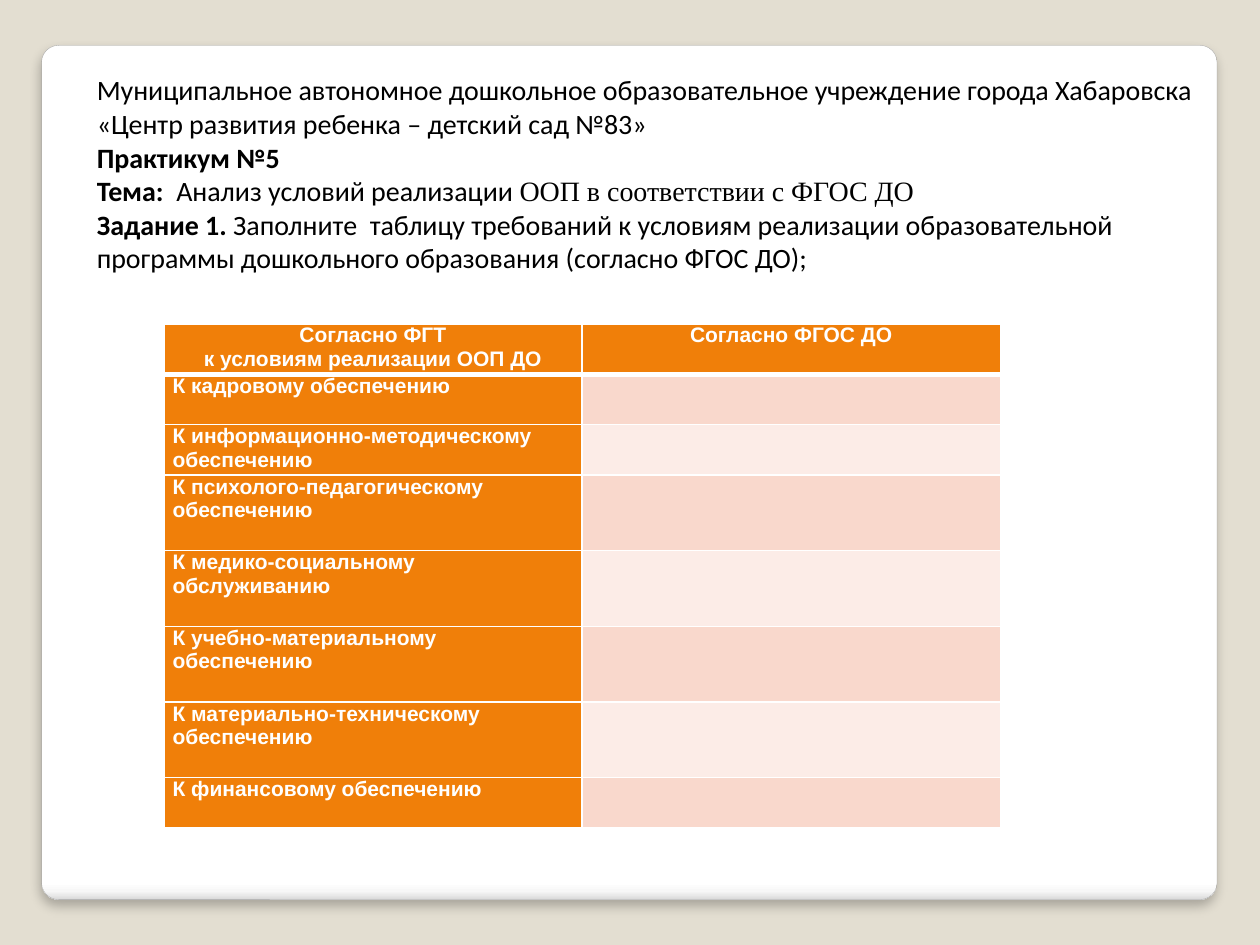
from dataclasses import dataclass

import lxml.etree
import pptx
import pptx.dml.color
import pptx.enum.shapes
import pptx.enum.text
import pptx.oxml
import pptx.oxml.ns
import pptx.util

Inches = pptx.util.Inches
Pt = pptx.util.Pt
qn = pptx.oxml.ns.qn
CENTER = pptx.enum.text.PP_ALIGN.CENTER
LEFT = pptx.enum.text.PP_ALIGN.LEFT


@dataclass(frozen=True)
class Theme:
    background: str = "E3DED1"
    white: str = "FFFFFF"
    black: str = "000000"
    panel_line: str = "A4A4A4"
    orange: str = "F07F09"
    bands: tuple = ("F9D8CC", "FCECE7")
    panel_stops: tuple = ((0, "FFFFFF"), (98, "FFFFFF"), (99, "F7F7F7"), (100, "DADADA"))
    intro_font: str = "Calibri"
    accent_font: str = "Times New Roman"
    table_font: str = "Arial"
    intro_size: int = 16
    table_size: int = 12


@dataclass(frozen=True)
class Span:
    text: str
    bold: bool = False
    font: str | None = None


@dataclass(frozen=True)
class Requirement:
    text: str
    height: float


THEME = Theme()

INTRO = (
    (Span("Муниципальное автономное дошкольное образовательное учреждение города Хабаровска"),),
    (Span("«Центр развития ребенка – детский сад №83»"),),
    (Span("Практикум №5", bold=True),),
    (Span("Тема:  ", bold=True), Span("Анализ условий реализации "),
     Span("ООП в соответствии с ФГОС ДО", font=THEME.accent_font)),
    (Span("Задание 1. ", bold=True),
     Span("Заполните  таблицу требований к условиям реализации образовательной "
          "программы дошкольного образования (согласно ФГОС ДО);")),
)

HEADINGS = (("Согласно ФГТ", "к условиям реализации ООП ДО"), ("Согласно ФГОС ДО",))
HEADING_HEIGHT = 0.4
REQUIREMENTS = (
    Requirement("К кадровому обеспечению", 0.4),
    Requirement("К информационно-методическому обеспечению", 0.4),
    Requirement("К психолого-педагогическому обеспечению", 0.6),
    Requirement("К медико-социальному обслуживанию", 0.6),
    Requirement("К учебно-материальному обеспечению", 0.6),
    Requirement("К материально-техническому обеспечению", 0.6),
    Requirement("К финансовому обеспечению", 0.4),
)


def rgb(value: str) -> pptx.dml.color.RGBColor:
    return pptx.dml.color.RGBColor.from_string(value)


def style_font(font, name: str, size: int, color: str) -> None:
    font.name = name
    font.size = Pt(size)
    font.color.rgb = rgb(color)


def draw_panel(slide) -> None:
    panel = slide.shapes.add_shape(
        pptx.enum.shapes.MSO_SHAPE.ROUNDED_RECTANGLE,
        Inches(0.33), Inches(0.36), Inches(9.33), Inches(6.78))
    panel.adjustments[0] = 0.02
    panel.line.color.rgb = rgb(THEME.panel_line)
    panel.line.width = Pt(0.16)
    panel.shadow.inherit = False

    # Shading along the lower edge
    panel.fill.gradient()
    panel.fill.gradient_angle = 270
    stops = panel.element.spPr.find(qn("a:gradFill")).find(qn("a:gsLst"))
    stops.clear()
    for position, color in THEME.panel_stops:
        stop = lxml.etree.SubElement(stops, qn("a:gs"), pos=str(position * 1000))
        lxml.etree.SubElement(stop, qn("a:srgbClr"), val=color)

    # Soft shadow below
    effects = panel.element.spPr.find(qn("a:effectLst"))
    shadow = lxml.etree.SubElement(
        effects, qn("a:outerShdw"), blurRad=str(Pt(6)), dist=str(Pt(4)),
        dir="5400000", algn="t", rotWithShape="0")
    tint = lxml.etree.SubElement(shadow, qn("a:srgbClr"), val=THEME.black)
    lxml.etree.SubElement(tint, qn("a:alpha"), val="25000")


def draw_intro(slide) -> None:
    frame = slide.shapes.add_textbox(
        Inches(0.67), Inches(0.53), Inches(8.98), Inches(1.99)).text_frame
    frame.word_wrap = True
    for index, spans in enumerate(INTRO):
        paragraph = frame.add_paragraph() if index else frame.paragraphs[0]
        style_font(paragraph.font, THEME.intro_font, THEME.intro_size, THEME.black)
        for span in spans:
            run = paragraph.add_run()
            run.text = span.text
            run.font.bold = span.bold
            if span.font:
                run.font.name = span.font


def set_borders(cell, top: int = 1, bottom: int = 1) -> None:
    properties = cell._tc.get_or_add_tcPr()
    widths = {"a:lnL": 1, "a:lnR": 1, "a:lnT": top, "a:lnB": bottom}
    for index, (side, width) in enumerate(widths.items()):
        line = lxml.etree.Element(qn(side), w=str(Pt(width)))
        fill = lxml.etree.SubElement(line, qn("a:solidFill"))
        lxml.etree.SubElement(fill, qn("a:srgbClr"), val=THEME.white)
        properties.insert(index, line)


def fill_cell(cell, lines: tuple, color: str, align=LEFT) -> None:
    cell.fill.solid()
    cell.fill.fore_color.rgb = rgb(color)
    cell.margin_left = cell.margin_right = Inches(0.07)
    cell.margin_top = cell.margin_bottom = 0
    cell.text_frame.text = "\n".join(lines)
    for paragraph in cell.text_frame.paragraphs:
        paragraph.alignment = align
        paragraph.font.bold = True
        style_font(paragraph.font, THEME.table_font, THEME.table_size, THEME.white)


def draw_requirements(slide) -> None:
    heights = [HEADING_HEIGHT] + [item.height for item in REQUIREMENTS]
    table = slide.shapes.add_table(
        len(heights), len(HEADINGS), Inches(1.3), Inches(2.57),
        Inches(6.64), Inches(sum(heights))).table
    for row, height in zip(table.rows, heights):
        row.height = Inches(height)

    # Heading row with a heavy rule below
    for column, lines in enumerate(HEADINGS):
        cell = table.cell(0, column)
        fill_cell(cell, lines, THEME.orange, CENTER)
        set_borders(cell, bottom=3)

    # Requirements with banded cells for the answers
    for index, item in enumerate(REQUIREMENTS):
        label, answer = table.rows[index + 1].cells
        fill_cell(label, (item.text,), THEME.orange)
        fill_cell(answer, (), THEME.bands[index % 2])
        for cell in (label, answer):
            set_borders(cell, top=1 if index else 3)


def main() -> None:
    deck = pptx.Presentation()
    deck.slide_width, deck.slide_height = Inches(10), Inches(7.5)
    slide = deck.slides.add_slide(deck.slide_layouts[6])
    slide.background.fill.solid()
    slide.background.fill.fore_color.rgb = rgb(THEME.background)
    draw_panel(slide)
    draw_intro(slide)
    draw_requirements(slide)
    deck.save("out.pptx")


if __name__ == "__main__":
    main()
